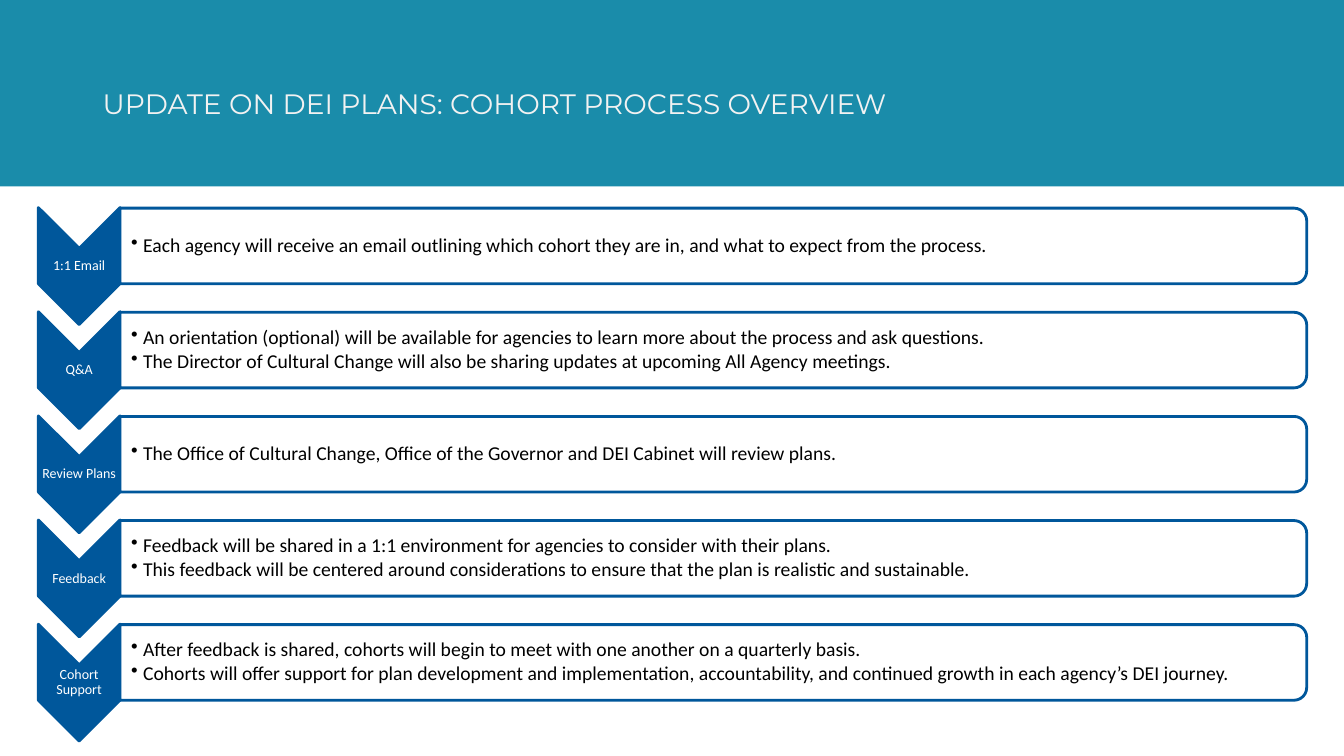
import pptx
import pptx.util
import pptx.dml.color
import pptx.enum.shapes
import pptx.enum.text
import pptx.oxml.ns
import lxml.etree

Inches, Pt = pptx.util.Inches, pptx.util.Pt
Shape = pptx.enum.shapes.MSO_SHAPE
Align = pptx.enum.text.PP_ALIGN
COLORS = {"band": "1A8CAA", "title": "F2F2F2", "blue": "00579B",
          "white": "FFFFFF", "black": "000000"}

steps = [
    ("1:1 Email", [
        "Each agency will receive an email outlining which cohort they are in, and what to expect from the process."]),
    ("Q&A", [
        "An orientation (optional) will be available for agencies to learn more about the process and ask questions.",
        "The Director of Cultural Change will also be sharing updates at upcoming All Agency meetings."]),
    ("Review Plans", [
        "The Office of Cultural Change, Office of the Governor and DEI Cabinet will review plans."]),
    ("Feedback", [
        "Feedback will be shared in a 1:1 environment for agencies to consider with their plans.",
        "This feedback will be centered around considerations to ensure that the plan is realistic and sustainable."]),
    ("Cohort Support", [
        "After feedback is shared, cohorts will begin to meet with one another on a quarterly basis.",
        "Cohorts will offer support for plan development and implementation, accountability, "
        "and continued growth in each agency’s DEI journey."]),
]

deck = pptx.Presentation()
deck.slide_width, deck.slide_height = Inches(13.33), Inches(7.5)
slide = deck.slides.add_slide(deck.slide_layouts[6])


def add_block(kind, mid_x, mid_y, wide, high, fill, line=None, turn=0):
    """Add a filled shape by its centre; turn is in degrees."""
    block = slide.shapes.add_shape(
        kind, Inches(mid_x - wide / 2), Inches(mid_y - high / 2), Inches(wide), Inches(high))
    block.rotation = turn
    block.shadow.inherit = False
    block.fill.solid()
    block.fill.fore_color.rgb = pptx.dml.color.RGBColor.from_string(COLORS[fill])
    if line:
        block.line.color.rgb = pptx.dml.color.RGBColor.from_string(COLORS[line])
        block.line.width = Pt(2)
    else:
        block.line.fill.background()
    return block


def add_text(lines, left, mid_y, wide, high, face, size, color,
             pads=(0.01, 0.01), align=Align.LEFT, after=0, bullet=False):
    """Add a middle-anchored text box; pads are the left and other insets."""
    box = slide.shapes.add_textbox(
        Inches(left), Inches(mid_y - high / 2), Inches(wide), Inches(high))
    frame = box.text_frame
    frame.word_wrap = True
    frame.vertical_anchor = pptx.enum.text.MSO_ANCHOR.MIDDLE
    frame.margin_left = Inches(pads[0])
    frame.margin_right = frame.margin_top = frame.margin_bottom = Inches(pads[1])
    frame.text = "\n".join(lines)
    for para in frame.paragraphs:
        para.alignment = align
        para.line_spacing = 0.9
        para.space_after = Pt(after)
        if bullet:
            props = para._p.get_or_add_pPr()
            props.set("marL", str(Inches(0.12)))
            props.set("indent", str(Inches(-0.12)))
            mark = lxml.etree.SubElement(props, pptx.oxml.ns.qn("a:buChar"))
            mark.set("char", "•")
        for run in para.runs:
            run.font.name = face
            run.font.size = Pt(size)
            run.font.color.rgb = pptx.dml.color.RGBColor.from_string(COLORS[color])


# Title band
band = 1.85
add_block(Shape.RECTANGLE, 13.33 / 2, band / 2, 13.33, band, "band")
add_text(["UPDATE ON DEI PLANS: COHORT PROCESS OVERVIEW"], 0.92, 1.05, 9.75, 1.31,
         "Montserrat", 20, "title", pads=(0.1, 0.05))

# One row per step: arrow with its label, panel with its points
top, pitch = 2.44, 1.033
arrow, edge, panel = 0.81, 1.19, 11.77
for row, (label, points) in enumerate(steps):
    mid = top + row * pitch
    add_block(Shape.CHEVRON, edge - arrow / 2, mid + 0.2, 1.16, arrow, "blue", "blue", 90)
    add_text([label], edge - arrow, mid + 0.2, arrow, 0.35, "Calibri", 10, "white",
             align=Align.CENTER, after=3.5)
    card = add_block(Shape.ROUND_2_SAME_RECTANGLE, edge + panel / 2, mid, 0.75, panel,
                     "white", "blue", 90)
    tint = card.fill._xPr.find(".//" + pptx.oxml.ns.qn("a:srgbClr"))
    lxml.etree.SubElement(tint, pptx.oxml.ns.qn("a:alpha")).set("val", "90000")
    add_text(points, edge, mid, panel - 0.03, 0.68, "Calibri", 14, "black",
             pads=(0.11, 0.01), after=2, bullet=True)

deck.save("out.pptx")
